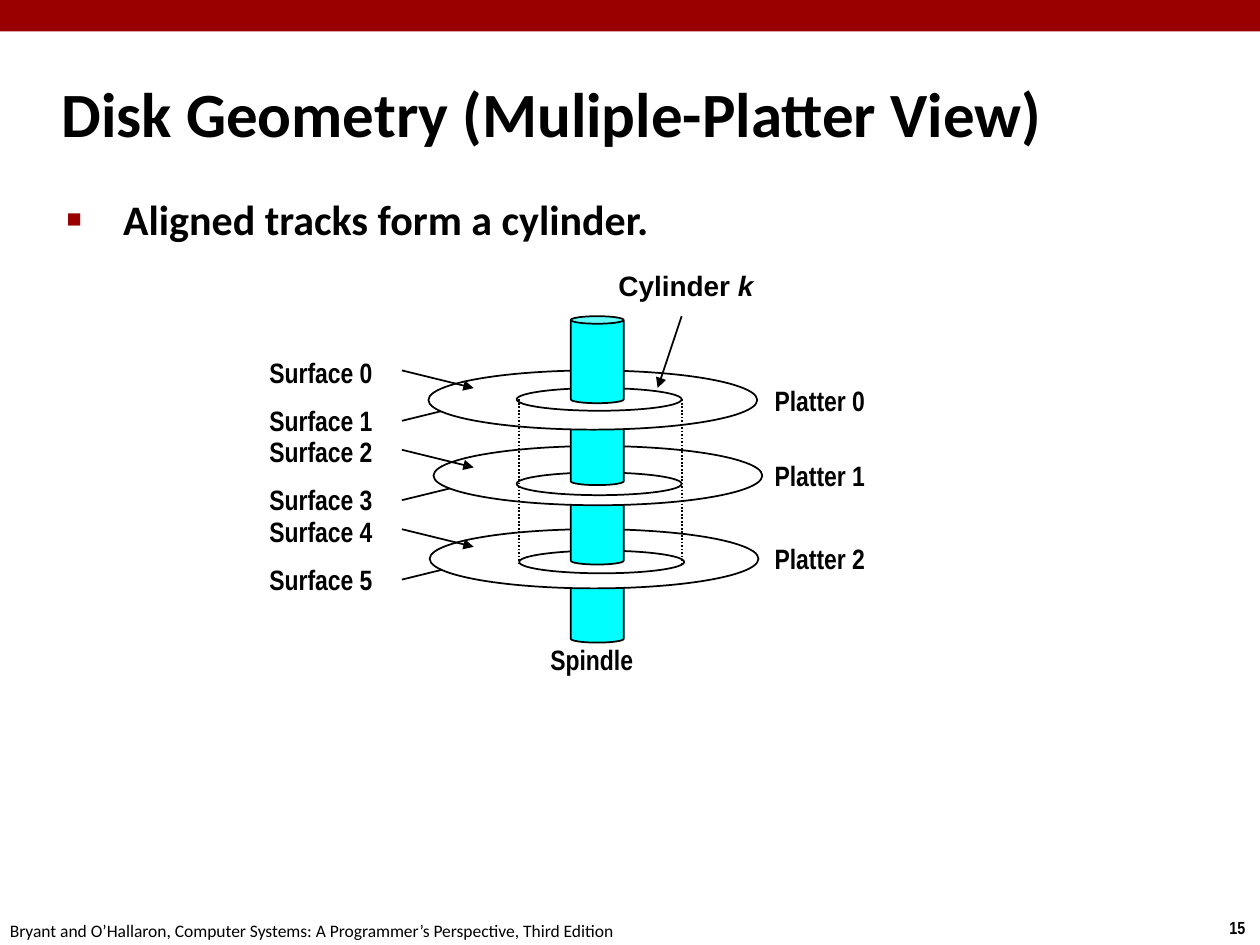
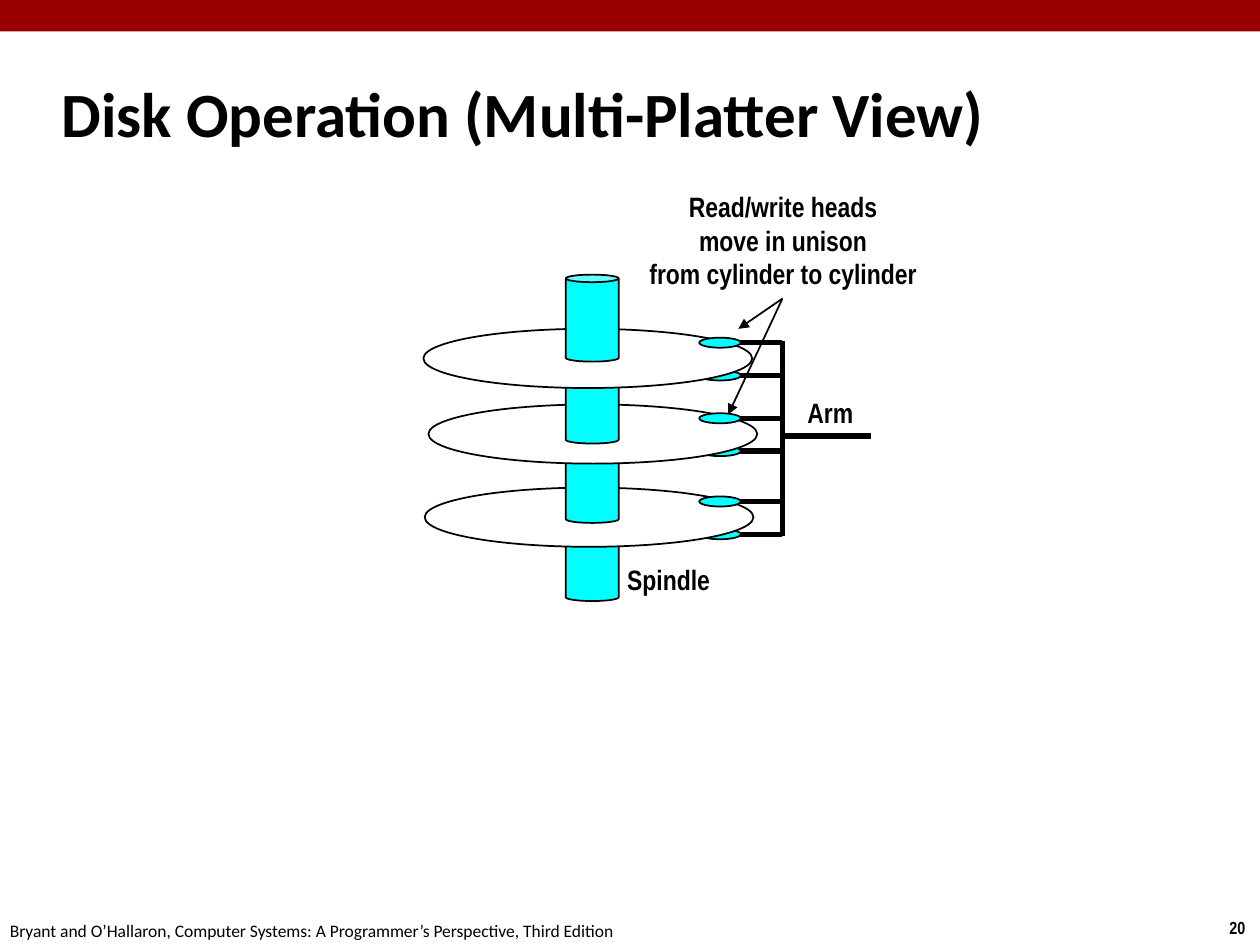
from lxml import etree
from pptx import Presentation
from pptx.dml.color import RGBColor
from pptx.enum.dml import MSO_LINE
from pptx.enum.shapes import MSO_CONNECTOR, MSO_SHAPE
from pptx.enum.text import MSO_ANCHOR, MSO_AUTO_SIZE, PP_ALIGN
from pptx.oxml.ns import qn
from pptx.util import Inches, Pt

COLUMNS, ROWS = 100, 75
CELL = Inches(0.1)
RED, BLACK, WHITE, CYAN = "990000", "000000", "FFFFFF", "00FFFF"
FOOTER = "Bryant and O’Hallaron, Computer Systems: A Programmer’s Perspective, Third Edition"

TITLE_FONT = {"name": "Calibri", "size": Pt(36), "bold": True}
BODY_FONT = {"name": "Calibri", "size": Pt(24), "bold": True}
LABEL_FONT = {"name": "Arial Narrow", "size": Pt(16), "bold": True}
CYLINDER_FONT = {"name": "Arial", "size": Pt(16), "bold": True}
FOOTER_FONT = {"name": "Calibri", "size": Pt(10), "bold": False}
NUMBER_FONT = {"name": "Arial Narrow", "size": Pt(10), "bold": True}

LABEL_FRAME = {"word_wrap": False, "vertical_anchor": MSO_ANCHOR.MIDDLE,
               "auto_size": MSO_AUTO_SIZE.SHAPE_TO_FIT_TEXT}
FOOTER_FRAME = {**LABEL_FRAME, "vertical_anchor": MSO_ANCHOR.TOP}
TITLE_FRAME = {"word_wrap": True, "vertical_anchor": MSO_ANCHOR.MIDDLE}
BODY_FRAME = {"word_wrap": True, "vertical_anchor": MSO_ANCHOR.TOP}

PLATTER_OFFSETS = [(-11.3, 4.3), (-10.9, 10.3), (-11.2, 16.9)]
TRACK_OFFSETS = [(-4.3, 5.7), (-4.3, 12.4), (-4.1, 18.6)]
SPINDLE_OFFSETS = [0, 6.5, 12.8, 19]
SURFACE_PITCH = 6.3


def cells(*counts):
    return [round(count * CELL) for count in counts]


def color(value):
    return RGBColor.from_string(value)


def apply_format(target, values):
    for name, value in values.items():
        setattr(target, name, value)


def add_text(slide, box, lines, font, frame_format, align=PP_ALIGN.LEFT):
    frame = slide.shapes.add_textbox(*cells(*box)).text_frame
    apply_format(frame, frame_format)
    for index, line in enumerate(lines):
        paragraph = frame.add_paragraph() if index else frame.paragraphs[0]
        paragraph.alignment = align
        add_run(paragraph, line, font)
    return frame.paragraphs[0]


def add_run(paragraph, text, font):
    run = paragraph.add_run()
    run.text = text
    apply_format(run.font, font)
    run.font.color.rgb = color(BLACK)


def add_label(slide, left, top, width, text):
    add_text(slide, (left, top, width, 3.7), [text], LABEL_FONT, LABEL_FRAME)


def add_bullet(paragraph, indent):
    paragraph.space_before = Pt(4.8)
    properties = paragraph._p.get_or_add_pPr()
    properties.set("marL", str(indent))
    properties.set("indent", str(-indent))
    bullet_color = etree.SubElement(properties, qn("a:buClr"))
    etree.SubElement(bullet_color, qn("a:srgbClr"), val=RED)
    etree.SubElement(properties, qn("a:buSzPct"), val="60000")
    etree.SubElement(properties, qn("a:buFont"), typeface="Arial")
    etree.SubElement(properties, qn("a:buChar"), char="■")


def add_figure(slide, kind, box, fill=None, outline=BLACK):
    shape = slide.shapes.add_shape(kind, *cells(*box))
    shape.shadow.inherit = False
    if fill:
        shape.fill.solid()
        shape.fill.fore_color.rgb = color(fill)
    else:
        shape.fill.background()
    if outline:
        shape.line.color.rgb = color(outline)
        shape.line.width = Pt(1)
    else:
        shape.line.fill.background()
    return shape


def add_line(slide, start, end, width=1, dash=None, arrow=False):
    connector = slide.shapes.add_connector(MSO_CONNECTOR.STRAIGHT, *cells(*start, *end))
    connector.line.color.rgb = color(BLACK)
    connector.line.width = Pt(width)
    if dash:
        connector.line.dash_style = dash
    if arrow:
        etree.SubElement(connector.line._get_or_add_ln(), qn("a:tailEnd"), type="triangle")
    etree.SubElement(connector._element.spPr, qn("a:effectLst"))


def add_page(presentation, title, number):
    slide = presentation.slides.add_slide(presentation.slide_layouts[6])
    add_figure(slide, MSO_SHAPE.RECTANGLE, (0, 0, COLUMNS, 2.5), RED, None)
    add_text(slide, (96.6, 72.3, 3.4, 2.7), [number], NUMBER_FONT, FOOTER_FRAME)
    add_text(slide, (-0.2, 72.5, 50.8, 2.7), [FOOTER], FOOTER_FONT, FOOTER_FRAME)
    add_text(slide, (3.9, 4.8, 83, 8.3), [title], TITLE_FONT, TITLE_FRAME)
    return slide


def add_spindle(slide, left, top):
    spindle = add_figure(slide, MSO_SHAPE.CAN, (left, top, 4.2, 6.9), CYAN)
    spindle.adjustments[0] = 0.142


def add_disk_stack(slide, left, top, tracks=False):
    for index in (2, 1, 0):
        add_spindle(slide, left, top + SPINDLE_OFFSETS[index + 1])
        across, down = PLATTER_OFFSETS[index]
        add_figure(slide, MSO_SHAPE.OVAL, (left + across, top + down, 26.1, 4.7), WHITE)
        if tracks:
            across, down = TRACK_OFFSETS[index]
            add_figure(slide, MSO_SHAPE.OVAL, (left + across, top + down, 13.1, 1.8))
    add_spindle(slide, left, top)


def add_surface_arrows(slide, start, end):
    for index in range(3):
        drop = index * SURFACE_PITCH
        add_line(slide, (31.9, start + drop), (37.6, end + drop), arrow=True)


def add_heads(slide, top, depth):
    for _, down in PLATTER_OFFSETS:
        level = top + down + depth
        add_line(slide, (62.1, level), (57.1, level), width=3)
        add_figure(slide, MSO_SHAPE.OVAL, (55.5, level - 0.4, 3.3, 0.8), CYAN)


def build_geometry(presentation):
    slide = add_page(presentation, "Disk Geometry (Muliple-Platter View)", "15")
    body = add_text(slide, (4.3, 14.9, 86.4, 54.4), ["Aligned tracks form a cylinder."],
                    BODY_FONT, BODY_FRAME)
    add_bullet(body, Inches(0.45))
    left, top = 45.3, 25.1
    add_surface_arrows(slide, 33.4, 32)
    add_disk_stack(slide, left, top, tracks=True)
    add_surface_arrows(slide, 29.4, 30.8)
    for surface in range(6):
        platter, underside = divmod(surface, 2)
        add_label(slide, 20.4, 27.7 + platter * SURFACE_PITCH + underside * 3.8, 10.3,
                  f"Surface {surface}")
    for platter, (_, down) in enumerate(PLATTER_OFFSETS):
        add_label(slide, 60.5, top + down + 0.5, 9.3, f"Platter {platter}")
    for edge in (41.2, 54.1):
        add_line(slide, (edge, 31.7), (edge, 44.7), dash=MSO_LINE.ROUND_DOT)
    cylinder = add_text(slide, (48.1, 20.8, 13, 3.7), ["Cylinder "], CYLINDER_FONT, LABEL_FRAME)
    add_run(cylinder, "k", {**CYLINDER_FONT, "italic": True})
    add_line(slide, (54.1, 25.1), (52.2, 30.8), arrow=True)
    add_label(slide, 42.7, 50.5, 8.7, "Spindle")


def build_operation(presentation):
    slide = add_page(presentation, "Disk Operation (Multi-Platter View)", "20")
    left, top = 44.9, 21.8
    add_heads(slide, top, 3.7)
    add_disk_stack(slide, left, top)
    add_heads(slide, top, 1.1)
    add_line(slide, (62.1, 27.1), (62.1, 42.5), width=3)
    add_line(slide, (62.1, 34.6), (69.1, 34.6), width=3)
    add_label(slide, 63.1, 30.9, 5.7, "Arm")
    add_label(slide, 48.8, 44.1, 8.7, "Spindle")
    add_text(slide, (50.1, 14.5, 24.1, 9.1),
             ["Read/write heads", "move in unison", "from cylinder to cylinder"],
             LABEL_FONT, {**LABEL_FRAME, "word_wrap": True}, PP_ALIGN.CENTER)
    for head in ((58.6, 26.1), (57.8, 32.9)):
        add_line(slide, (62.1, 23.7), head, arrow=True)


def main():
    presentation = Presentation()
    apply_format(presentation, {"slide_width": COLUMNS * CELL, "slide_height": ROWS * CELL})
    build_geometry(presentation)
    build_operation(presentation)
    presentation.save("out.pptx")


if __name__ == "__main__":
    main()
